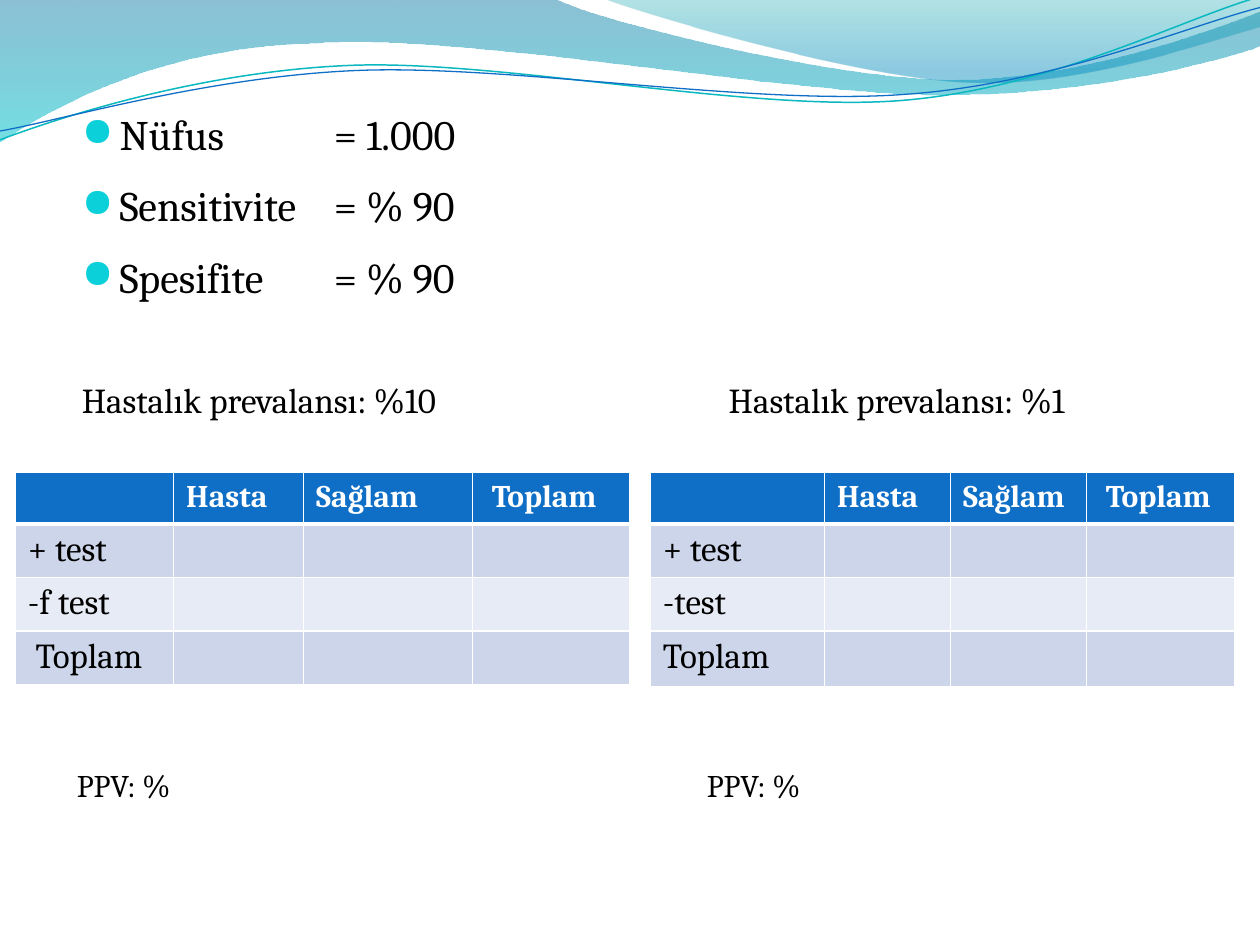
import pptx
import pptx.dml.color
import pptx.oxml
import pptx.oxml.ns
import pptx.util

Cm = pptx.util.Cm
Pt = pptx.util.Pt
RGBColor = pptx.dml.color.RGBColor
qn = pptx.oxml.ns.qn

FONT = "Cambria"
BLACK = RGBColor(0, 0, 0)
WHITE = RGBColor(255, 255, 255)
BLUE = RGBColor(0x0F, 0x6F, 0xC6)
TEAL = RGBColor(0x0A, 0xB8, 0xBF)
BULLET = RGBColor(0x0B, 0xD0, 0xD9)
BAND_DARK = RGBColor(0xCC, 0xD5, 0xEA)
BAND_LIGHT = RGBColor(0xE7, 0xEB, 0xF5)
WAVE_TOP = RGBColor(0x00, 0x74, 0xA1)
WAVE_BOTTOM = RGBColor(0x00, 0xC6, 0xCF)
CREST_TOP = RGBColor(0x00, 0xA1, 0xA9)
CREST_BOTTOM = RGBColor(0x00, 0x8B, 0xBF)

WAVE_UNIT = Cm(0.0254)

WAVE = [(0, 0), (440, -1),
        (476, 17, 664, 63, 758, 63), (853, 63, 958, 26, 1000, 9),
        (1001, 36),
        (983, 44, 870, 76, 746, 75), (622, 75, 382, 28, 257, 34),
        (129, 36, 46, 83, -1, 113)]
CREST = [(479, -1), (509, 11, 682, 62, 769, 65),
         (856, 69, 961, 32, 1000, 21), (1000, 0)]
TEAL_LINE = [(0, 111), (48, 93, 158, 57, 277, 52),
             (395, 47, 593, 89, 713, 80), (833, 71, 938, 15, 998, -2)]
BLUE_LINE = [(0, 104), (47, 96, 164, 61, 283, 56),
             (403, 51, 597, 84, 717, 75), (836, 67, 941, 21, 1000, 6)]


def add_element(parent, tag, **attrs):
    el = parent.makeelement(qn(tag), attrs)
    parent.append(el)
    return el


def bend_segments(sp, path):
    lines = iter(list(sp.element.spPr.iter(qn("a:lnTo"))))
    for step in path[1:]:
        first = next(lines)
        if len(step) == 6:
            curve = first.makeelement(qn("a:cubicBezTo"), {})
            first.addprevious(curve)
            for line in (first, next(lines), next(lines)):
                curve.append(line[0])
                line.getparent().remove(line)


def add_outline(slide, path, close):
    points = [(step[i], step[i + 1]) for step in path for i in range(0, len(step), 2)]
    builder = slide.shapes.build_freeform(*points[0], scale=WAVE_UNIT)
    builder.add_line_segments(points[1:], close=close)
    sp = builder.convert_to_shape()
    bend_segments(sp, path)
    sp.shadow.inherit = False
    return sp


def add_wave(slide, path, stops):
    sp = add_outline(slide, path, True)
    sp.line.fill.background()
    sp.fill.gradient()
    sp.fill.gradient_angle = 270
    for stop, (position, color, _) in zip(sp.fill.gradient_stops, stops):
        stop.position = position
        stop.color.rgb = color
    for clr, (_, _, opacity) in zip(sp.element.spPr.iter(qn("a:srgbClr")), stops):
        add_element(clr, "a:alpha", val=str(opacity * 1000))


def add_wave_line(slide, path, color, width):
    sp = add_outline(slide, path, False)
    sp.fill.background()
    sp.line.color.rgb = color
    sp.line.width = Pt(width)


def format_text(p, size, color=BLACK, bold=False):
    for r in p.runs:
        r.font.name = FONT
        r.font.size = Pt(size)
        r.font.color.rgb = color
        r.font.bold = bold


def add_bullet(p):
    pPr = p._p.get_or_add_pPr()
    pPr.set("marL", str(Cm(0.76)))
    pPr.set("indent", str(-Cm(0.76)))
    clr = add_element(pPr, "a:buClr")
    add_element(clr, "a:srgbClr", val=str(BULLET))
    add_element(pPr, "a:buSzPct", val="95000")
    add_element(pPr, "a:buFont", typeface="OpenSymbol")
    add_element(pPr, "a:buChar", char="●")


def add_tab_stop(p, position):
    tabs = add_element(p._p.get_or_add_pPr(), "a:tabLst")
    add_element(tabs, "a:tab", pos=str(position), algn="l")


def add_text_box(slide, left, top, width, height):
    tf = slide.shapes.add_textbox(Cm(left), Cm(top), Cm(width), Cm(height)).text_frame
    tf.word_wrap = True
    return tf


def add_facts(slide):
    tf = add_text_box(slide, 1.4, 2.06, 22.86, 16)
    facts = ["Nüfus\t= 1.000", "Sensitivite\t= % 90", "Spesifite\t= % 90"]
    for i, text in enumerate(facts):
        p = tf.paragraphs[0] if i == 0 else tf.add_paragraph()
        p.text = text
        p.space_before = Pt(12 if i else 0)
        format_text(p, 24)
        add_bullet(p)
        add_tab_stop(p, Cm(5.08))
    p = tf.add_paragraph()
    p.text = "Hastalık prevalansı: %10\tHastalık prevalansı: %1"
    p.space_before = Pt(44)
    format_text(p, 20)
    add_tab_stop(p, Cm(13.04))


def add_predictive_values(slide):
    p = add_text_box(slide, 1.3, 15.32, 22.63, 1.02).paragraphs[0]
    p.text = "PPV: %\tPPV: %"
    format_text(p, 18)
    add_tab_stop(p, Cm(12.7))


def set_borders(cell, top, bottom):
    tcPr = cell._tc.get_or_add_tcPr()
    for side, width in (("L", 1), ("R", 1), ("T", top), ("B", bottom)):
        ln = add_element(tcPr, "a:ln" + side, w=str(Pt(width)))
        fill = add_element(ln, "a:solidFill")
        add_element(fill, "a:srgbClr", val=str(WHITE))


def add_test_table(slide, left, widths, heights, labels):
    shape = slide.shapes.add_table(len(heights), len(widths), Cm(left), Cm(9.53),
                                   Cm(sum(widths)), Cm(sum(heights)))
    table = shape.table
    for column, width in zip(table.columns, widths):
        column.width = Cm(width)
    for row, height in zip(table.rows, heights):
        row.height = Cm(height)
    rows = [["", "Hasta", "Sağlam", " Toplam"]]
    rows += [[label, "", "", ""] for label in labels]
    fills = [BLUE, BAND_DARK, BAND_LIGHT, BAND_DARK]
    for i, (texts, fill) in enumerate(zip(rows, fills)):
        header = i == 0
        for j, text in enumerate(texts):
            cell = table.cell(i, j)
            set_borders(cell, 3 if i == 1 else 1, 3 if header else 1)
            cell.margin_top, cell.margin_bottom = Cm(0.12), Cm(0.11)
            cell.fill.solid()
            cell.fill.fore_color.rgb = fill
            if text:
                p = cell.text_frame.paragraphs[0]
                p.text = text
                format_text(p, 18 if header else 20, WHITE if header else BLACK, header)


def main():
    prs = pptx.Presentation()
    prs.slide_width, prs.slide_height = Cm(25.4), Cm(19.05)
    slide = prs.slides.add_slide(prs.slide_layouts[6])
    add_wave(slide, WAVE, [(0, WAVE_TOP, 45), (1, WAVE_BOTTOM, 55)])
    add_wave(slide, CREST, [(0, CREST_TOP, 30), (0.8, CREST_BOTTOM, 45)])
    add_wave_line(slide, TEAL_LINE, TEAL, 0.85)
    add_wave_line(slide, BLUE_LINE, BLUE, 0.75)
    add_facts(slide)
    add_test_table(slide, 0.31, [3.19, 2.62, 3.4, 3.18], [1.03] * 4,
                   ["+ test", "-f test", " Toplam"])
    add_test_table(slide, 13.11, [3.51, 2.54, 2.74, 3], [1.03] * 3 + [1.12],
                   ["+ test", "-test", "Toplam"])
    add_predictive_values(slide)
    prs.save("out.pptx")


if __name__ == "__main__":
    main()
